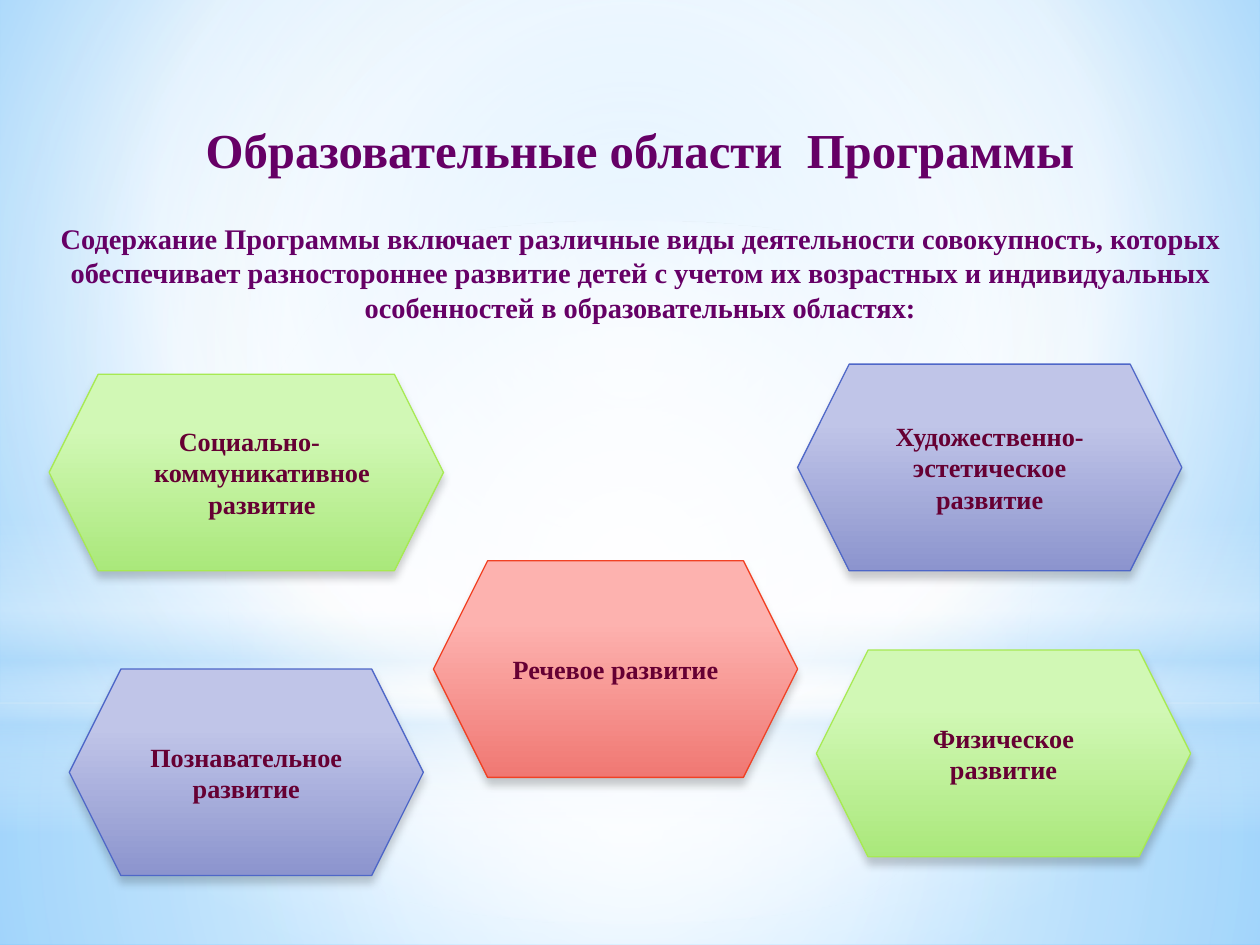
from lxml import etree
from pptx import Presentation
from pptx.dml.color import RGBColor
from pptx.enum.shapes import MSO_SHAPE
from pptx.enum.text import MSO_ANCHOR, MSO_AUTO_SIZE, PP_ALIGN
from pptx.oxml import parse_xml
from pptx.oxml.ns import qn
from pptx.util import Inches, Pt

FONT = "Times New Roman"
PURPLE, MAROON = "660066", "660033"
# Each palette: upper fill, lower fill, outline
GREEN = ("D1F8B5", "AAE87B", "A7EA52")
BLUE = ("C0C5E8", "8C94CE", "4E67C8")
RED = ("FDB2AF", "F07873", "F14124")
CENTER = (50, 50, 50, 50)


def color(value):
    return RGBColor.from_string(value)


def set_gradient(owner, fill, stops, focus=None):
    """Stops are (position, colour, opacity) in percent; no focus means top to bottom."""
    fill.gradient()
    old = owner.find(".//" + qn("a:gradFill"))
    new = parse_xml(
        '<a:gradFill xmlns:a="http://schemas.openxmlformats.org/drawingml/2006/main"'
        ' rotWithShape="1"><a:gsLst/></a:gradFill>')
    for position, value, opacity in stops:
        stop = etree.SubElement(new[0], qn("a:gs"), pos=str(position * 1000))
        tint = etree.SubElement(stop, qn("a:srgbClr"), val=value)
        if opacity < 100:
            etree.SubElement(tint, qn("a:alpha"), val=str(opacity * 1000))
    if focus:
        path = etree.SubElement(new, qn("a:path"))
        path.set("path", "circle")
        sides = {side: str(part * 1000) for side, part in zip("ltrb", focus)}
        etree.SubElement(path, qn("a:fillToRect"), sides)
    else:
        etree.SubElement(new, qn("a:lin"), ang="5400000", scaled="0")
    old.getparent().replace(old, new)


def add_shape(page, kind, box):
    shape = page.shapes.add_shape(kind, *map(Inches, box))
    shape.shadow.inherit = False
    return shape


def add_span(para, text, size, value):
    span = para.add_run()
    span.text = text
    span.font.name = FONT
    span.font.size = Pt(size)
    span.font.bold = True
    span.font.color.rgb = color(value)


def add_backdrop(page):
    set_gradient(page.background.fill and page.element, page.background.fill,
                 [(0, "9ED5FF", 100), (60, "FFFFFF", 100), (100, "5BB9FF", 100)],
                 (20, 10, 20, 60))
    rect, oval = MSO_SHAPE.RECTANGLE, MSO_SHAPE.OVAL
    glows = [
        (rect, (0, 5.58, 10, 1.92), CENTER,
         [(0, "FFFFFF", 91), (37, "FFFFFF", 76), (100, "B4DCFA", 79)]),
        (rect, (0, 0, 10, 5.58), CENTER,
         [(0, "FFFFFF", 89), (48, "FFFFFF", 62), (100, "B4DCFA", 79)]),
        (rect, (0, 4.12, 10, 2.5), None,
         [(0, "FFFFFF", 0), (29, "FFFFFF", 30), (45, "B4DCFA", 40),
          (55, "FFFFFF", 26), (65, "B4DCFA", 60), (100, "FFFFFF", 0)]),
        (oval, (0, 1.75, 10, 5.58), CENTER,
         [(0, "FFFFFF", 100), (56, "FFFFFF", 0)]),
    ]
    for kind, box, focus, stops in glows:
        glow = add_shape(page, kind, box)
        set_gradient(glow.element, glow.fill, stops, focus)
        glow.line.fill.background()
        # Keep the glow behind the title
        page.shapes.title.element.addprevious(glow.element)


def add_heading(page, box, heading, intro):
    title = page.shapes.title
    title.left, title.top, title.width, title.height = map(Inches, box)
    frame = title.text_frame
    frame.word_wrap = True
    frame.auto_size = MSO_AUTO_SIZE.NONE
    frame.vertical_anchor = MSO_ANCHOR.TOP
    frame.margin_top = frame.margin_bottom = 0
    para = frame.paragraphs[0]
    add_span(para, heading, 27.9, PURPLE)
    detail = frame.add_paragraph()
    detail.space_before = Pt(24)
    detail.line_spacing = Pt(19.7)
    add_span(detail, intro, 16.2, PURPLE)
    for line in (para, detail):
        line.alignment = PP_ALIGN.CENTER


def add_area(page, box, text, palette, hanging=False):
    top, bottom, outline = palette
    area = add_shape(page, MSO_SHAPE.HEXAGON, box)
    set_gradient(area.element, area.fill, [(28, top, 100), (100, bottom, 100)])
    area.line.color.rgb = color(outline)
    area.line.width = Pt(0.75)
    # Soft shadow straight below
    effects = area.element.find(".//" + qn("a:effectLst"))
    shadow = etree.SubElement(effects, qn("a:outerShdw"), blurRad=str(Pt(5)),
                              dist=str(Pt(4)), dir="5400000", rotWithShape="0")
    tint = etree.SubElement(shadow, qn("a:srgbClr"), val="000000")
    etree.SubElement(tint, qn("a:alpha"), val="20000")
    # Label
    frame = area.text_frame
    frame.word_wrap = True
    frame.vertical_anchor = MSO_ANCHOR.MIDDLE
    para = frame.paragraphs[0]
    para.alignment = PP_ALIGN.CENTER
    add_span(para, text, 15, MAROON)
    if hanging:
        para.space_before = para.space_after = Pt(3)
        layout = area.element.find(".//" + qn("a:pPr"))
        layout.set("marL", str(Inches(0.25)))
        layout.set("indent", str(Inches(-0.2)))


def main():
    deck = Presentation()
    deck.slide_width, deck.slide_height = Inches(10), Inches(7.5)
    page = deck.slides.add_slide(deck.slide_layouts[5])
    add_backdrop(page)
    add_heading(page, (0.33, 0.95, 9.5, 1.7), "Образовательные области  Программы",
                "Содержание Программы включает различные виды деятельности "
                "совокупность, которых обеспечивает разностороннее развитие детей "
                "с учетом их возрастных и индивидуальных особенностей в "
                "образовательных областях:")
    add_area(page, (0.39, 2.97, 3.13, 1.56), "Социально-коммуникативное развитие",
             GREEN, hanging=True)
    add_area(page, (0.55, 5.31, 2.81, 1.64), "Познавательное развитие", BLUE)
    add_area(page, (3.44, 4.45, 2.89, 1.72), "Речевое развитие", RED)
    add_area(page, (6.48, 5.16, 2.97, 1.64), "Физическое развитие", GREEN)
    add_area(page, (6.33, 2.89, 3.05, 1.64), "Художественно-эстетическое развитие", BLUE)
    deck.save("out.pptx")


if __name__ == "__main__":
    main()
